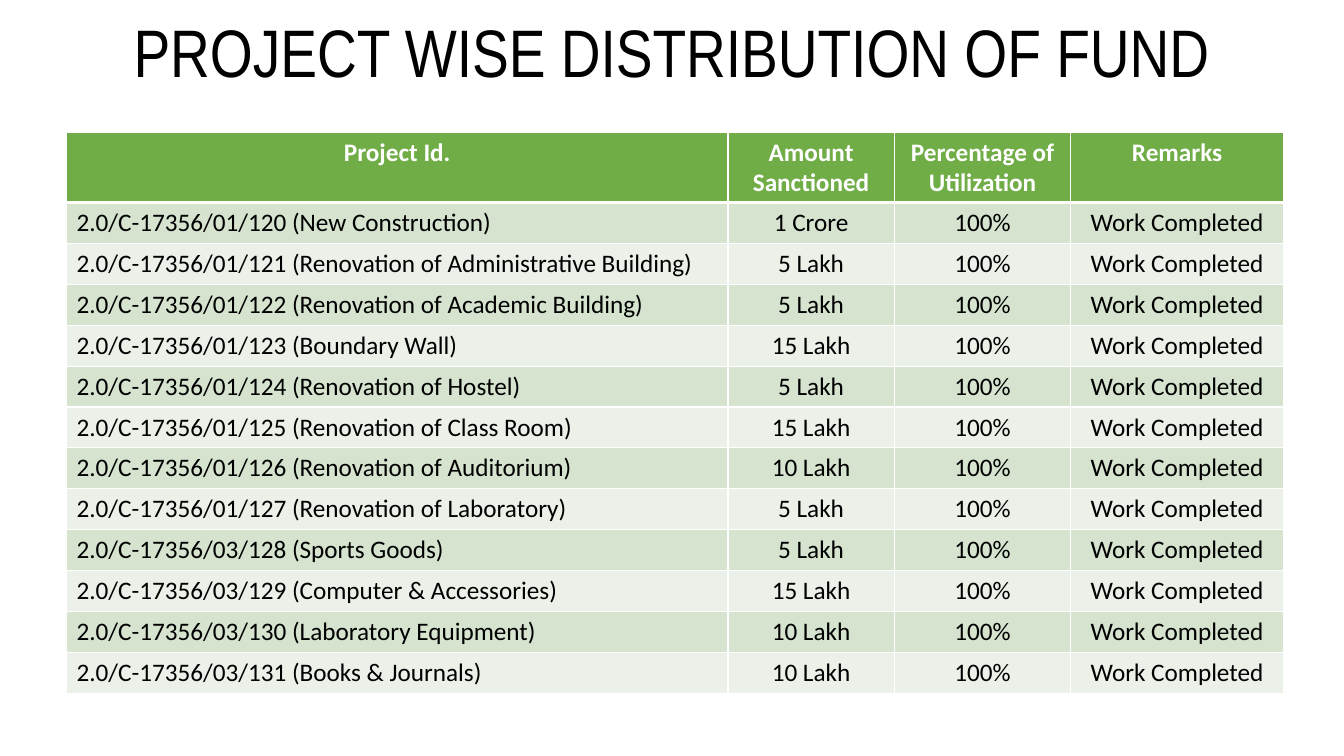
from typing import NamedTuple

from pptx import Presentation
from pptx.dml.color import RGBColor
from pptx.enum.text import MSO_ANCHOR as Anchor, PP_ALIGN as Align
from pptx.oxml.ns import qn
from pptx.util import Inches, Pt
from lxml.etree import SubElement

WHITE, BLACK, GREEN = "FFFFFF", "000000", "70AD47"
BANDS = ("D5E3CF", "EBF1E9")
HEADINGS = ("Project Id.", "Amount Sanctioned", "Percentage of Utilization", "Remarks")
COLUMN_WIDTHS = (6.56, 1.65, 1.75, 2.11)
HEADER_HEIGHT, BODY_HEIGHT = 0.7, 4.87
THIN, THICK = 1, 3


class Project(NamedTuple):
    project_id: str
    amount: str
    utilization: str = "100%"
    remarks: str = "Work Completed"


PROJECTS = (
    Project("2.0/C-17356/01/120 (New Construction)", "1 Crore"),
    Project("2.0/C-17356/01/121 (Renovation of Administrative Building)", "5 Lakh"),
    Project("2.0/C-17356/01/122 (Renovation of Academic Building)", "5 Lakh"),
    Project("2.0/C-17356/01/123 (Boundary Wall)", "15 Lakh"),
    Project("2.0/C-17356/01/124 (Renovation of Hostel)", "5 Lakh"),
    Project("2.0/C-17356/01/125 (Renovation of Class Room)", "15 Lakh"),
    Project("2.0/C-17356/01/126 (Renovation of Auditorium)", "10 Lakh"),
    Project("2.0/C-17356/01/127 (Renovation of Laboratory)", "5 Lakh"),
    Project("2.0/C-17356/03/128 (Sports Goods)", "5 Lakh"),
    Project("2.0/C-17356/03/129 (Computer & Accessories)", "15 Lakh"),
    Project("2.0/C-17356/03/130 (Laboratory Equipment)", "10 Lakh"),
    Project("2.0/C-17356/03/131 (Books & Journals)", "10 Lakh"),
)


def rgb(code: str) -> RGBColor:
    return RGBColor.from_string(code)


def write(paragraph, text: str, font: str, size: float, color: str,
          bold: bool = False, align: Align = Align.CENTER) -> None:
    paragraph.alignment = align
    run = paragraph.add_run()
    run.text = text
    run.font.name, run.font.size, run.font.bold = font, Pt(size), bold
    run.font.color.rgb = rgb(color)


def add_borders(cell, top: float, bottom: float) -> None:
    properties = cell._tc.get_or_add_tcPr()
    for side, width in (("L", THIN), ("R", THIN), ("T", top), ("B", bottom)):
        line = SubElement(properties, qn(f"a:ln{side}"), w=str(Pt(width)))
        SubElement(SubElement(line, qn("a:solidFill")), qn("a:srgbClr"), val=WHITE)


def add_title(slide) -> None:
    title = slide.shapes.add_textbox(0, 0, Inches(13.33), Inches(1.11)).text_frame
    title.word_wrap = True
    title.vertical_anchor = Anchor.MIDDLE
    heading = title.paragraphs[0]
    heading.line_spacing = 0.9
    write(heading, "PROJECT WISE DISTRIBUTION OF FUND", "Arial Narrow", 48, BLACK)


def add_fund_table(slide) -> None:
    rows = (HEADINGS, *PROJECTS)
    funds = slide.shapes.add_table(
        len(rows), len(HEADINGS), Inches(0.66), Inches(1.31),
        Inches(sum(COLUMN_WIDTHS)), Inches(HEADER_HEIGHT + BODY_HEIGHT)).table
    for column, width in zip(funds.columns, COLUMN_WIDTHS):
        column.width = Inches(width)

    for r, values in enumerate(rows):
        header = r == 0
        funds.rows[r].height = Inches(HEADER_HEIGHT if header else BODY_HEIGHT / len(PROJECTS))
        for c, value in enumerate(values):
            cell = funds.cell(r, c)
            # Borders precede the fill in the cell properties
            add_borders(cell, THICK if r == 1 else THIN, THICK if header else THIN)
            cell.fill.solid()
            cell.fill.fore_color.rgb = rgb(GREEN if header else BANDS[(r - 1) % 2])
            write(cell.text_frame.paragraphs[0], value, "Calibri", 18,
                  WHITE if header else BLACK, header,
                  Align.CENTER if header or c else Align.LEFT)


def main() -> None:
    deck = Presentation()
    deck.slide_width, deck.slide_height = Inches(13.33), Inches(7.5)
    slide = deck.slides.add_slide(deck.slide_layouts[6])
    add_title(slide)
    add_fund_table(slide)
    deck.save("out.pptx")


if __name__ == "__main__":
    main()
